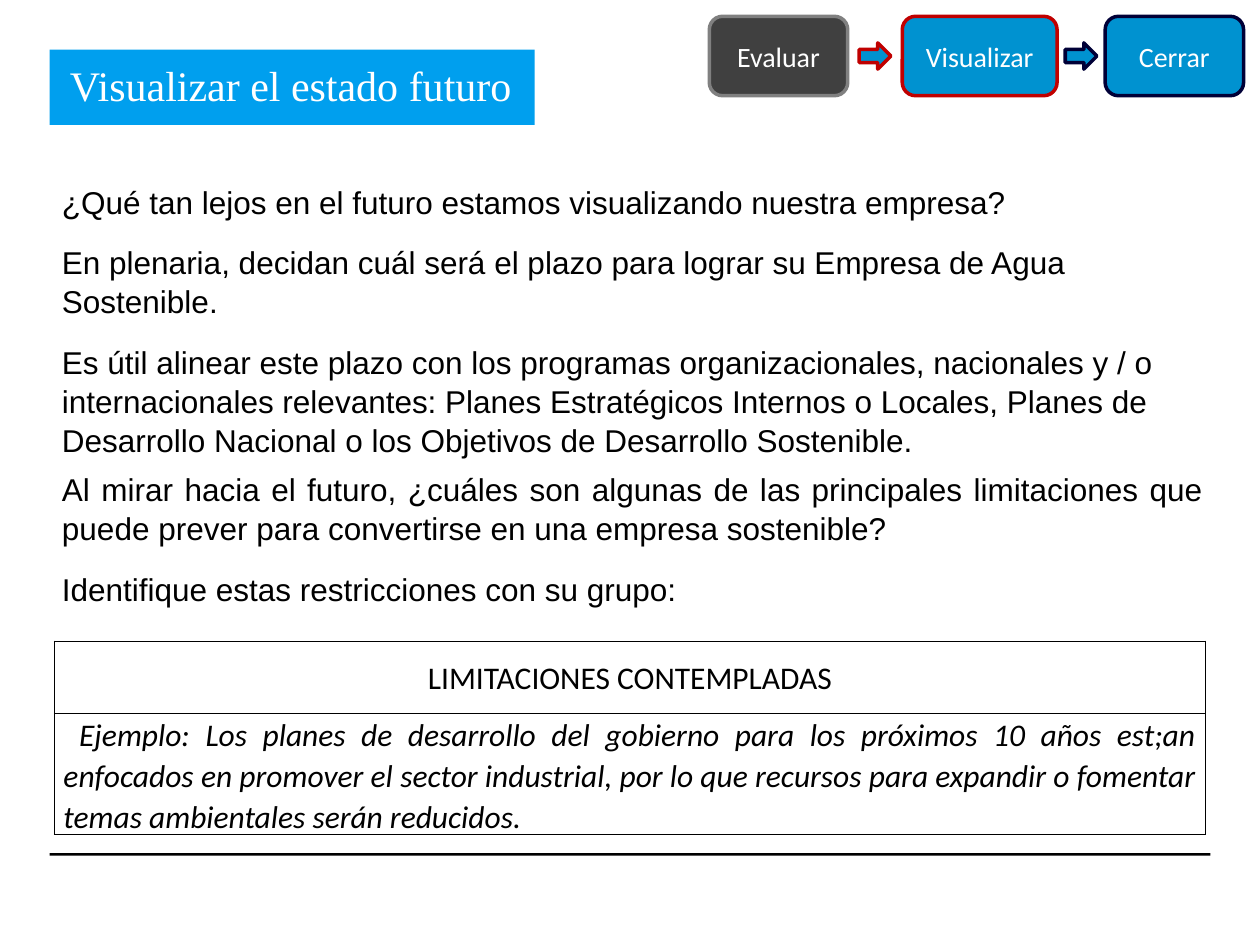
from lxml.etree import SubElement
from pptx import Presentation
from pptx.dml.color import RGBColor
from pptx.enum.shapes import MSO_SHAPE as Shape
from pptx.enum.text import MSO_ANCHOR as Anchor, PP_ALIGN as Align
from pptx.oxml.ns import qn
from pptx.util import Cm, Pt

BLACK = RGBColor(0x00, 0x00, 0x00)
WHITE = RGBColor(0xFF, 0xFF, 0xFF)
TITLE_BLUE = RGBColor(0x00, 0x9F, 0xEE)
STEP_BLUE = RGBColor(0x00, 0x92, 0xD0)
CHARCOAL = RGBColor(0x40, 0x40, 0x40)
GREY = RGBColor(0x80, 0x80, 0x80)
RED = RGBColor(0xC0, 0x00, 0x00)
NAVY = RGBColor(0x00, 0x00, 0x37)

BODY_FONT = dict(name="Arial", size=Pt(18))
TITLE_FONT = dict(name="Times New Roman", size=Pt(24))
STEP_FONT = dict(name="Calibri", size=Pt(16))
TABLE_FONT = dict(name="Calibri", size=Pt(18))
TITLE_FRAME = dict(word_wrap=False, margin_left=Cm(0.41), margin_right=Cm(0.41),
                   margin_top=Cm(0.2), margin_bottom=Cm(0.3))
STEP_FRAME = dict(word_wrap=True, vertical_anchor=Anchor.MIDDLE)
CELL_FRAME = dict(margin_left=Cm(0.18), margin_right=Cm(0.18),
                  margin_top=0, margin_bottom=0)

QUESTIONS = [
    "¿Qué tan lejos en el futuro estamos visualizando nuestra empresa?",
    "En plenaria, decidan cuál será el plazo para lograr su Empresa de Agua Sostenible.",
    "Es útil alinear este plazo con los programas organizacionales, nacionales y / o "
    "internacionales relevantes: Planes Estratégicos Internos o Locales, Planes de "
    "Desarrollo Nacional o los Objetivos de Desarrollo Sostenible.",
]
CONSTRAINTS = [
    "Al mirar hacia el futuro, ¿cuáles son algunas de las principales limitaciones que "
    "puede prever para convertirse en una empresa sostenible?",
    "Identifique estas restricciones con su grupo:",
]
EXAMPLE = (
    "Ejemplo: Los planes de desarrollo del gobierno para los próximos 10 años est;an "
    "enfocados en promover el sector industrial, por lo que recursos para expandir o "
    "fomentar temas ambientales serán reducidos. "
)
# label, offset from the left of the strip, width, fill, outline
STEPS = [
    ("Evaluar", 0, 2.79, CHARCOAL, GREY),
    ("Visualizar", 3.89, 3.12, STEP_BLUE, RED),
    ("Cerrar", 7.98, 2.79, STEP_BLUE, NAVY),
]


def apply(target, values):
    for attribute, value in values.items():
        setattr(target, attribute, value)


def write(paragraph, text, font, color, **layout):
    apply(paragraph, layout)
    run = paragraph.add_run()
    run.text = text
    apply(run.font, font)
    run.font.color.rgb = color
    return run


def add_block(slide, preset, box, fill, outline=None):
    block = slide.shapes.add_shape(preset, *map(Cm, box))
    block.shadow.inherit = False
    block.fill.solid()
    block.fill.fore_color.rgb = fill
    if outline is None:
        block.line.fill.background()
    else:
        block.line.color.rgb = outline
        block.line.width = Pt(2)
    return block


def add_title(slide, box):
    frame = add_block(slide, Shape.RECTANGLE, box, TITLE_BLUE).text_frame
    apply(frame, TITLE_FRAME)
    frame.vertical_anchor = Anchor.TOP
    write(frame.paragraphs[0], "Visualizar el estado futuro", TITLE_FONT, WHITE,
          alignment=Align.LEFT)


def add_paragraphs(slide, box, texts, alignment):
    frame = slide.shapes.add_textbox(*map(Cm, box)).text_frame
    frame.word_wrap = True
    for index, text in enumerate(texts):
        paragraph = frame.add_paragraph() if index else frame.paragraphs[0]
        write(paragraph, text, BODY_FONT, BLACK, alignment=alignment, line_spacing=1.04,
              space_before=Pt(6 if index else 0), space_after=Pt(6))


def add_steps(slide, left, top, height):
    """Row of steps, each joined to the next by an arrow in the middle of the gap."""
    arrow_width, arrow_height = 0.64, 0.53
    previous_end = None
    for label, offset, width, fill, outline in STEPS:
        start = left + offset
        step = add_block(slide, Shape.ROUNDED_RECTANGLE, (start, top, width, height),
                         fill, outline)
        apply(step.text_frame, STEP_FRAME)
        write(step.text_frame.paragraphs[0], label, STEP_FONT, WHITE,
              alignment=Align.CENTER)
        if previous_end is not None:
            arrow_left = (previous_end + start - arrow_width) / 2
            arrow_top = top + (height - arrow_height) / 2
            add_block(slide, Shape.RIGHT_ARROW,
                      (arrow_left, arrow_top, arrow_width, arrow_height),
                      STEP_BLUE, outline)
        previous_end = start + width


def set_borders(cell):
    properties = cell._tc.get_or_add_tcPr()
    for position, side in enumerate(("a:lnL", "a:lnR", "a:lnT", "a:lnB")):
        border = SubElement(properties, qn(side), w=str(Pt(1)))
        properties.insert(position, border)
        fill = SubElement(border, qn("a:solidFill"))
        SubElement(fill, qn("a:srgbClr"), val=str(BLACK))


def add_constraint_table(slide, box, row_heights):
    table = slide.shapes.add_table(len(row_heights), 1, *map(Cm, box)).table
    apply(table, dict(first_row=False, horz_banding=False))
    for row, height in zip(table.rows, row_heights):
        row.height = Cm(height)
        cell = row.cells[0]
        cell.fill.background()
        apply(cell, CELL_FRAME)
        set_borders(cell)
    heading, example = table.cell(0, 0), table.cell(1, 0)
    heading.vertical_anchor = Anchor.MIDDLE
    write(heading.text_frame.paragraphs[0], "LIMITACIONES CONTEMPLADAS", TABLE_FONT,
          BLACK, alignment=Align.CENTER, line_spacing=1.07)
    paragraph = example.text_frame.paragraphs[0]
    write(paragraph, " ", TABLE_FONT, BLACK, alignment=Align.JUSTIFY, line_spacing=1.07)
    write(paragraph, EXAMPLE, TABLE_FONT, BLACK).font.italic = True


def main():
    deck = Presentation()
    deck.slide_width, deck.slide_height = Cm(25.4), Cm(19.05)
    slide = deck.slides.add_slide(deck.slide_layouts[6])
    add_block(slide, Shape.RECTANGLE, (1, 17.2, 23.4, 0.05), BLACK)
    add_paragraphs(slide, (1, 3.53, 23.5, 5.79), QUESTIONS, Align.LEFT)
    add_title(slide, (1, 1, 9.78, 1.52))
    add_constraint_table(slide, (1.1, 12.93, 23.2, 3.86), (1.45, 2.41))
    add_paragraphs(slide, (1, 9.32, 23.5, 3.1), CONSTRAINTS, Align.JUSTIFY)
    add_steps(slide, 14.3, 0.33, 1.6)
    deck.save("out.pptx")


if __name__ == "__main__":
    main()
